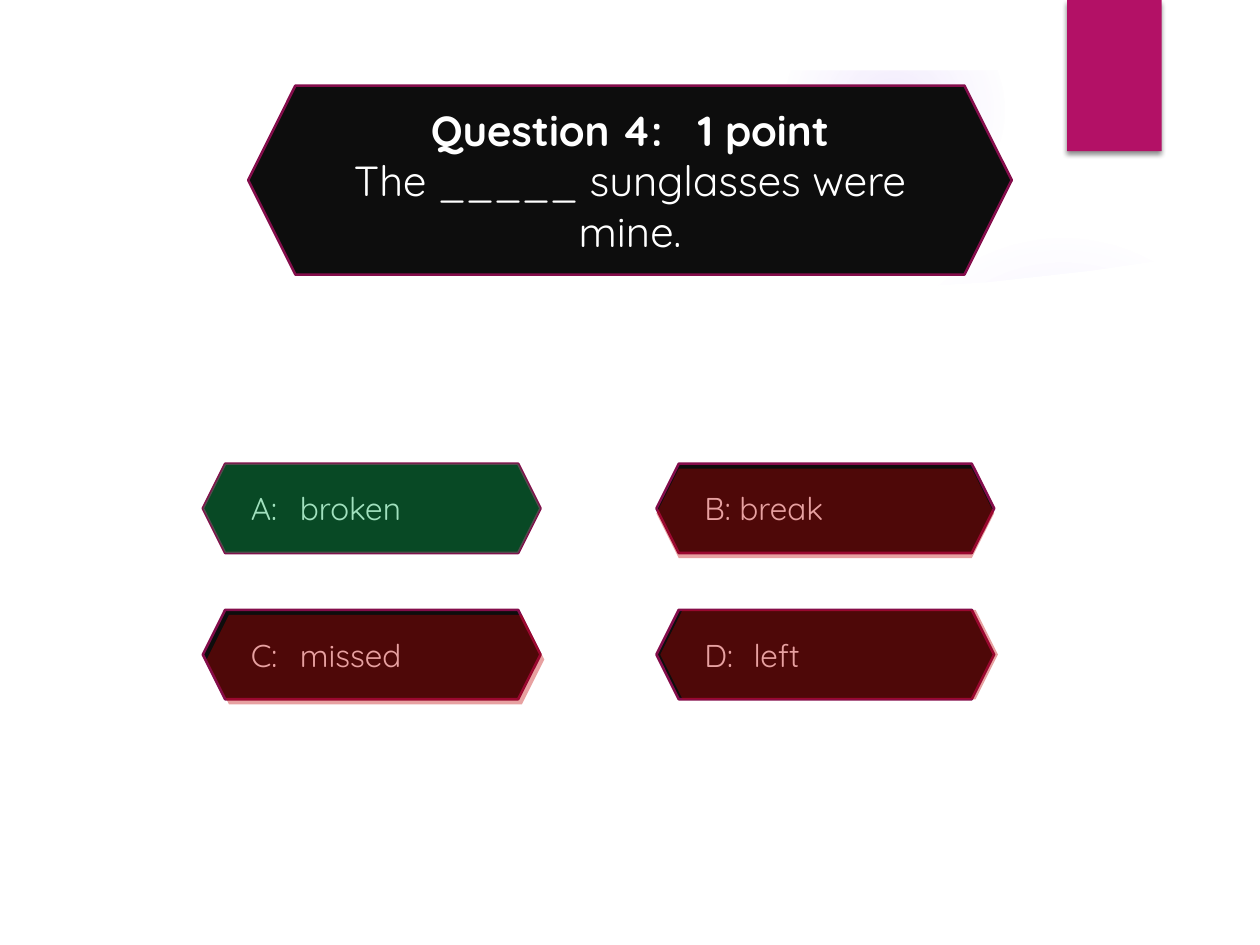
from lxml import etree
from pptx import Presentation
from pptx.dml.color import RGBColor
from pptx.enum.shapes import MSO_SHAPE
from pptx.enum.text import MSO_ANCHOR, PP_ALIGN
from pptx.oxml import parse_xml
from pptx.oxml.ns import nsdecls, qn
from pptx.util import Inches, Pt

HEXAGON, RECT, OVAL = MSO_SHAPE.HEXAGON, MSO_SHAPE.RECTANGLE, MSO_SHAPE.OVAL
MIDDLE = MSO_ANCHOR.MIDDLE
LEFT, CENTER = PP_ALIGN.LEFT, PP_ALIGN.CENTER

WIDTH, HEIGHT = 10, 7.5
FONT = "Quicksand"
WHITE, BLACK, PINK, EDGE = "FFFFFF", "0D0D0D", "B31166", "840D4B"
GLOW, RIGHT, WRONG = "9B6BF2", "00B050", "C00000"
COLS, ROWS = (1.61, 5.21), (3.68, 4.84)
ANSWER_W, ANSWER_H = 2.68, 0.71
ANSWERS = [
    ("A:\tbroken", RIGHT, 0, 0),
    ("B: break", WRONG, 0, 0.04),
    ("C:\tmissed", WRONG, 0.03, 0.04),
    ("D:\tleft", WRONG, 0.03, 0),
]
PANEL_EDGE = [(9.47, 2.03), (8.66, 2.15), (7.85, 2.24), (7.04, 2.29),
              (6.25, 2.33), (5.11, 2.34), (4.04, 2.33), (3.07, 2.28),
              (1.73, 2.17), (0.53, 2.03)]


def rgb(value):
    """Turn a hex string into a colour."""
    return RGBColor.from_string(value)


def paint(sp, fill, alpha=100, line=None):
    """Set fill, opacity in percent and outline, without a shadow."""
    sp.shadow.inherit = False
    sp.fill.solid()
    sp.fill.fore_color.rgb = rgb(fill)
    if alpha < 100:
        clr = sp._element.spPr.find(qn("a:solidFill"))[0]
        etree.SubElement(clr, qn("a:alpha"), val=str(alpha * 1000))
    if line:
        sp.line.color.rgb = rgb(line)
        sp.line.width = Pt(1.5)
    else:
        sp.line.fill.background()


def add_block(s, kind, x, y, w, h, fill, alpha=100, line=None):
    """Add a painted preset shape."""
    sp = s.shapes.add_shape(kind, Inches(x), Inches(y), Inches(w), Inches(h))
    paint(sp, fill, alpha, line)
    return sp


def add_glow(s, x, y, size, stops):
    """Add a circle that fades out from its centre."""
    sp = add_block(s, OVAL, x, y, size, size, GLOW)
    gs = "".join(
        f'<a:gs pos="{pos * 1000}"><a:srgbClr val="{GLOW}">'
        f'<a:alpha val="{alpha * 1000}"/></a:srgbClr></a:gs>'
        for pos, alpha in stops)
    grad = parse_xml(
        f'<a:gradFill {nsdecls("a")}><a:gsLst>{gs}</a:gsLst>'
        '<a:path path="circle"><a:fillToRect l="50000" t="50000" r="50000" '
        'b="50000"/></a:path></a:gradFill>')
    spPr = sp._element.spPr
    spPr.replace(spPr.find(qn("a:solidFill")), grad)


def add_panel(s):
    """Add the white panel with a curved top edge."""
    points = [(Inches(x), Inches(y)) for x, y in PANEL_EDGE]
    bottom = [(Inches(x), Inches(6.99)) for x in (0.53, 9.47)]
    fb = s.shapes.build_freeform(*points[0])
    fb.add_line_segments(points[1:] + bottom, close=True)
    paint(fb.convert_to_shape(), WHITE)


def add_tab(s):
    """Add the coloured tab with its soft shadow."""
    sp = add_block(s, RECT, 8.47, 0, 0.75, 1.2, PINK)
    effects = sp._element.spPr.find(qn("a:effectLst"))
    effects.append(parse_xml(
        f'<a:outerShdw {nsdecls("a")} blurRad="{Pt(3)}" dist="{Pt(2)}" '
        'dir="5400000" rotWithShape="0"><a:srgbClr val="000000">'
        '<a:alpha val="45000"/></a:srgbClr></a:outerShdw>'))


def add_label(s, x, y, w, h, lines, size, align, tab=None):
    """Add a dark hexagon holding (text, bold) lines."""
    sp = add_block(s, HEXAGON, x, y, w, h, BLACK, line=EDGE)
    tf = sp.text_frame
    tf.word_wrap = True
    tf.vertical_anchor = MIDDLE
    for i, (text, bold) in enumerate(lines):
        p = tf.add_paragraph() if i else tf.paragraphs[0]
        p.alignment = align
        if tab:
            tabs = etree.SubElement(p._p.get_or_add_pPr(), qn("a:tabLst"))
            etree.SubElement(tabs, qn("a:tab"), pos=str(Inches(tab)), algn="l")
        p.add_run().text = text
        p.font.name, p.font.size, p.font.bold = FONT, Pt(size), bold
        p.font.color.rgb = rgb(WHITE)


def main():
    """Build the quiz slide."""
    prs = Presentation()
    prs.slide_width, prs.slide_height = Inches(WIDTH), Inches(HEIGHT)
    s = prs.slides.add_slide(prs.slide_layouts[6])
    add_glow(s, 6.89, 1.83, 3.08, [(0, 7), (36, 6), (69, 0)])
    add_glow(s, 6.22, 0, 1.75, [(0, 14), (36, 7), (73, 0)])
    add_panel(s)
    add_block(s, RECT, 0, 0, WIDTH, 0.56, WHITE)
    add_block(s, RECT, 9.45, 0, WIDTH - 9.45, HEIGHT, WHITE)
    add_tab(s)
    cells = [(x, y) for y in ROWS for x in COLS]
    for (x, y), (text, *_) in zip(cells, ANSWERS):
        add_label(s, x, y, ANSWER_W, ANSWER_H, [(text, False)], 18, LEFT, 0.39)
    question = [("Question 4:   1 point", True),
                ("The _____ sunglasses were mine.", False)]
    add_label(s, 1.97, 0.68, 6.06, 1.5, question, 24, CENTER)
    for (x, y), (_, color, dx, dy) in zip(cells, ANSWERS):
        add_block(s, HEXAGON, x + dx, y + dy, ANSWER_W, ANSWER_H, color, 37)
    prs.save("out.pptx")


if __name__ == "__main__":
    main()
